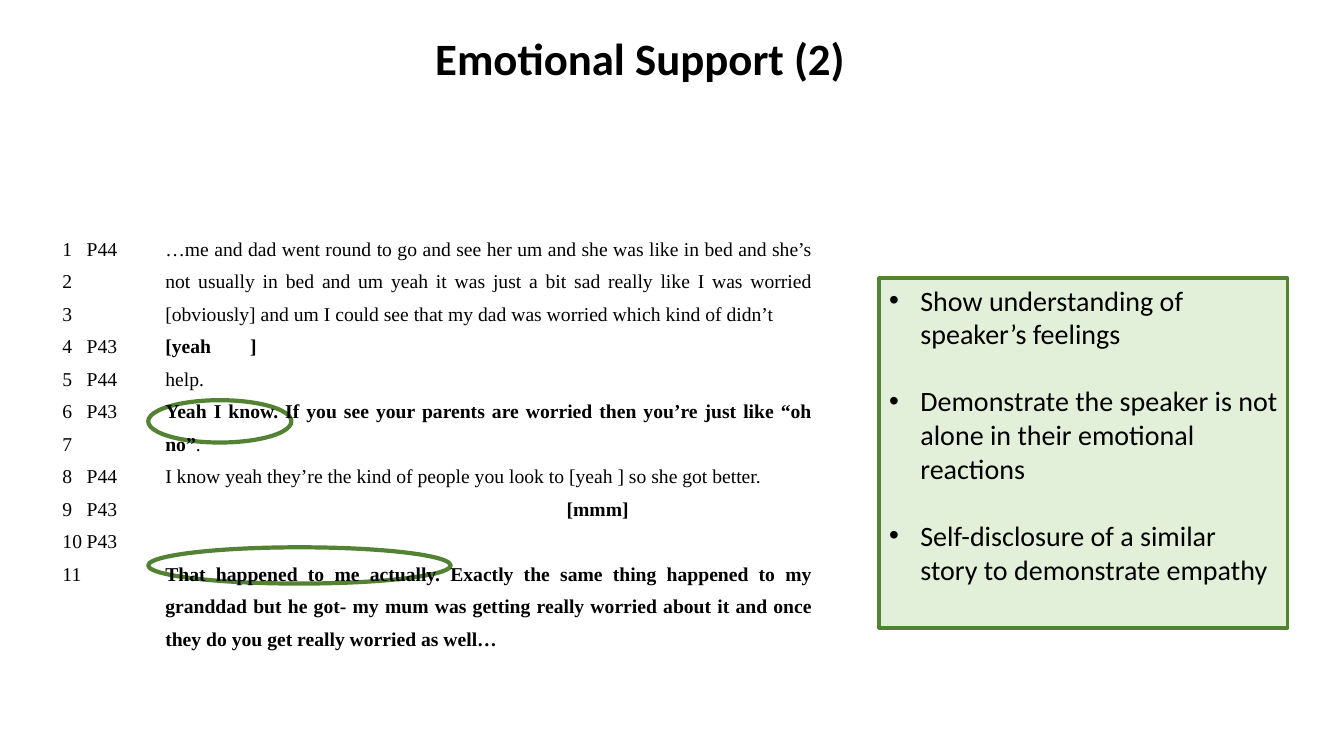
from lxml import etree
from pptx import Presentation
from pptx.dml.color import RGBColor
from pptx.enum.shapes import MSO_SHAPE
from pptx.enum.text import MSO_ANCHOR, PP_ALIGN
from pptx.oxml.ns import qn
from pptx.util import Inches, Pt

RECTANGLE, OVAL = MSO_SHAPE.RECTANGLE, MSO_SHAPE.OVAL
TOP = MSO_ANCHOR.TOP
LEFT, CENTER, JUSTIFY = PP_ALIGN.LEFT, PP_ALIGN.CENTER, PP_ALIGN.JUSTIFY
COLORS = {"text": "000000", "box": "E2F0D9", "outline": "548235"}
NO_TABLE_STYLE = "{2D5ABB26-0587-4C30-8999-92F81FD0307C}"


def add_text(paragraph, text, font_name, size, bold=False):
    run = paragraph.add_run()
    run.text = text
    font_format = {"name": font_name, "size": Pt(size), "bold": bold}
    for name, value in font_format.items():
        setattr(run.font, name, value)
    run.font.color.rgb = RGBColor.from_string(COLORS["text"])


def add_outlined(shape_type, left, top, width, height, line_width):
    shape = slide.shapes.add_shape(
        shape_type, Inches(left), Inches(top), Inches(width), Inches(height))
    shape.shadow.inherit = False
    shape.fill.background()
    shape.line.color.rgb = RGBColor.from_string(COLORS["outline"])
    shape.line.width = Pt(line_width)
    return shape


presentation = Presentation()
presentation.slide_width = Inches(13.33)
presentation.slide_height = Inches(7.5)
slide = presentation.slides.add_slide(presentation.slide_layouts[5])

# Title
title = slide.shapes.title
title_place = {"left": 2.74, "top": 0.25, "width": 7.22, "height": 0.64}
for name, value in title_place.items():
    setattr(title, name, Inches(value))
title.text_frame.vertical_anchor = TOP
title.text_frame.paragraphs[0].alignment = CENTER
add_text(title.text_frame.paragraphs[0], "Emotional Support (2)", "Calibri", 32, True)

# Strategies box
STRATEGIES = [
    "Show understanding of speaker’s feelings",
    "Demonstrate the speaker is not alone in their emotional reactions",
    "Self-disclosure of a similar story to demonstrate empathy",
]
box = add_outlined(RECTANGLE, 8.72, 2.76, 4.05, 3.47, 2.5)
box.fill.solid()
box.fill.fore_color.rgb = RGBColor.from_string(COLORS["box"])
box.text_frame.word_wrap = True
box.text_frame.vertical_anchor = TOP
for index, strategy in enumerate(STRATEGIES):
    paragraph = box.text_frame.paragraphs[0] if index == 0 else box.text_frame.add_paragraph()
    paragraph.alignment = LEFT
    paragraph.space_after = Pt(24)
    properties = paragraph._p.get_or_add_pPr()
    properties.set("marL", str(Inches(0.31)))
    properties.set("indent", str(-Inches(0.31)))
    etree.SubElement(properties, qn("a:buFont")).set("typeface", "Arial")
    etree.SubElement(properties, qn("a:buChar")).set("char", "•")
    add_text(paragraph, strategy, "Calibri", 20)

# Ellipses around the key phrases, behind the transcript
for top, width, height in [(5.43, 3, 0.36), (3.97, 1.42, 0.42)]:
    add_outlined(OVAL, 1.47, top, width, height, 3)

# Transcript: each paragraph is its runs (text, bold) and its layout
SPEAKERS = ["P44", "", "", "P43", "P44", "P43", "", "P44", "P43", "P43", ""]
line_numbers = [
    ([(f"{number}\t{speaker}" if speaker else str(number), False)], {"tab": 0.24})
    for number, speaker in enumerate(SPEAKERS, start=1)
]
utterances = [
    ([("…me and dad went round to go and see her um and she was like in bed "
       "and she’s not usually in bed and um yeah it was just a bit sad really "
       "like I was worried [obviously] and um I could see that my dad was "
       "worried which kind of didn’t", False)], {}),
    ([("[yeah\t]", True)], {"tab": 0.84}),
    ([("help.", False)], {}),
    ([("Yeah I know. If you see your parents are worried then you’re just "
       "like “oh no”", True), (".", False)], {}),
    ([("I know yeah they’re the kind of people you look to [yeah ] so she "
       "got better.", False)], {}),
    ([("[mmm]", True)], {"indent": 3.98}),
    ([("That happened to me actually. Exactly the same thing happened to my "
       "granddad but he got- my mum was getting really worried about it and "
       "once they do you get really worried as well…", True)], {"before": 23.2}),
]
table = slide.shapes.add_table(
    1, 2, Inches(0.55), Inches(2.26), Inches(7.58), Inches(4.2)).table
table.first_row = False
table.horz_banding = False
table._tbl.tblPr.find(qn("a:tableStyleId")).text = NO_TABLE_STYLE
cell_format = {
    "margin_left": Inches(0.07), "margin_right": Inches(0.07),
    "margin_top": 0, "margin_bottom": 0, "vertical_anchor": TOP,
}
for column, (width, content) in enumerate([(1.02, line_numbers), (6.56, utterances)]):
    table.columns[column].width = Inches(width)
    cell = table.cell(0, column)
    cell.fill.background()
    for name, value in cell_format.items():
        setattr(cell, name, value)
    for index, (runs, layout) in enumerate(content):
        paragraph = cell.text_frame.paragraphs[0] if index == 0 else cell.text_frame.add_paragraph()
        paragraph.alignment = JUSTIFY
        paragraph.line_spacing = 1.5
        paragraph.space_before = Pt(layout.get("before", 0))
        properties = paragraph._p.get_or_add_pPr()
        properties.set("marL", str(Inches(layout.get("indent", 0))))
        if "tab" in layout:
            tab_list = etree.SubElement(properties, qn("a:tabLst"))
            tab = etree.SubElement(tab_list, qn("a:tab"))
            tab.set("pos", str(Inches(layout["tab"])))
            tab.set("algn", "l")
        for text, bold in runs:
            add_text(paragraph, text, "Times New Roman", 14, bold)

presentation.save("out.pptx")
